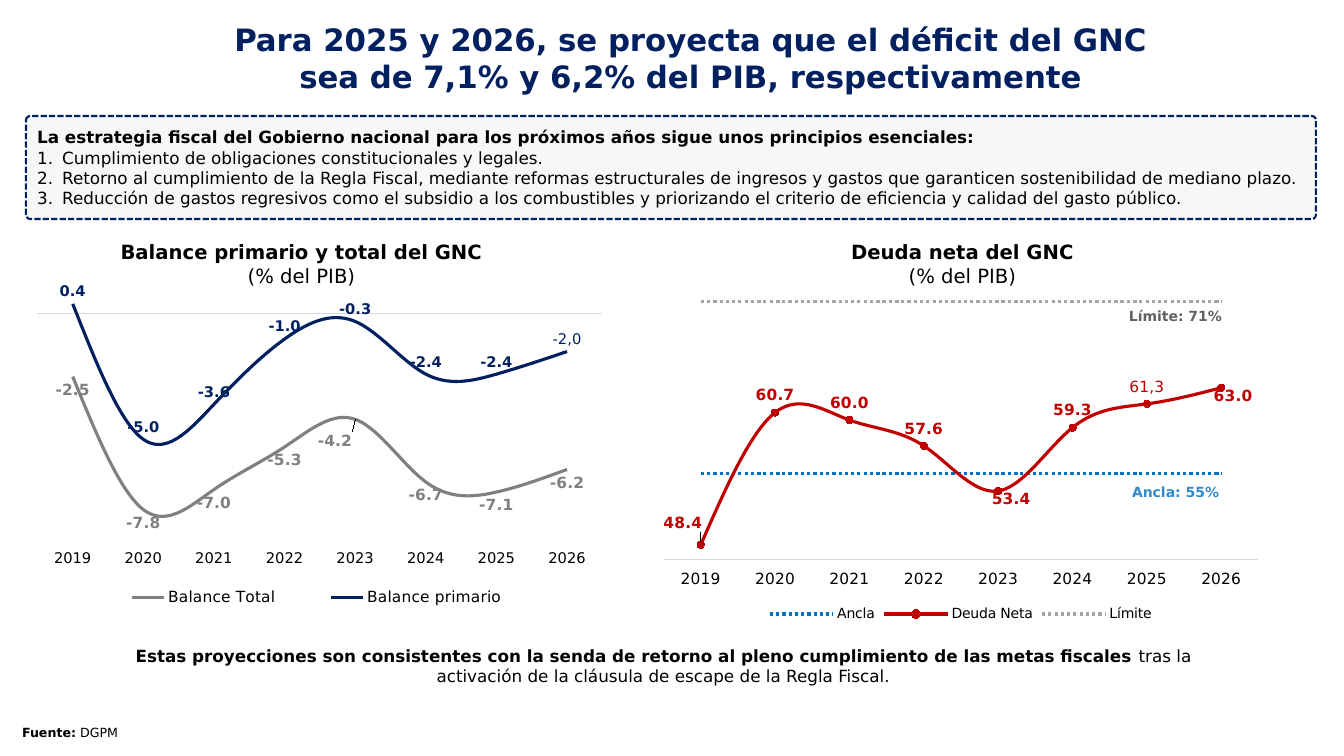
import lxml.etree
import pptx
import pptx.chart.data
import pptx.dml.color
import pptx.enum.chart
import pptx.enum.dml
import pptx.enum.shapes
import pptx.enum.text
import pptx.oxml
import pptx.oxml.ns
import pptx.util

FONT = "DejaVu Sans"
NAVY, BLACK, RED, GRAY = "002060", "000000", "C00000", "808080"
PALE, RULE = "F5F7F9", "D9D9D9"
PX = 914400 / 100.8
SLIDE_SIZE = (1344, 756)

# Each paragraph is a list of (text, bold) runs; boxes are left, top, width, height in px
UNIT = [("(% del PIB)", False)]
TEXTS = [
    dict(box=(202, 16, 977, 85), size=22, color=NAVY, align="CENTER", paragraphs=[
        [("Para 2025 y 2026, se proyecta que el déficit del GNC sea de 7,1% y 6,2% del PIB, "
          "respectivamente", True)]]),
    dict(box=(37, 235, 529, 57), size=14, align="CENTER",
         paragraphs=[[("Balance primario y total del GNC", True)], UNIT]),
    dict(box=(698, 235, 529, 57), size=14, align="CENTER",
         paragraphs=[[("Deuda neta del GNC", True)], UNIT]),
    dict(box=(1119, 303, 118, 27), size=10, color="626262", wrap=False,
         paragraphs=[[("Límite: 71%", True)]]),
    dict(box=(1122, 479, 113, 27), size=10, color="308BCC", wrap=False,
         paragraphs=[[("Ancla: 55%", True)]]),
    dict(box=(18, 720, 957, 25), size=9, side_inset=4,
         paragraphs=[[("Fuente:", True), (" DGPM", False)]]),
    dict(box=(85, 640, 1157, 51), size=12, align="CENTER", anchor="MIDDLE", paragraphs=[
        [("Estas proyecciones son consistentes con la senda de retorno al pleno cumplimiento "
          "de las metas fiscales ", True),
         ("tras la activación de la cláusula de escape de la Regla Fiscal.", False)]]),
]
PRINCIPLES = dict(size=12, align="JUSTIFY", anchor="MIDDLE", paragraphs=[
    [("La estrategia fiscal del Gobierno nacional para los próximos años sigue unos "
      "principios esenciales:", True)],
    [("Cumplimiento de obligaciones constitucionales y legales.", False)],
    [("Retorno al cumplimiento de la Regla Fiscal, mediante reformas estructurales de ingresos "
      "y gastos que garanticen sostenibilidad de mediano plazo.", False)],
    [("Reducción de gastos regresivos como el subsidio a los combustibles y priorizando el "
      "criterio de eficiencia y calidad del gasto público.", False)],
])
PRINCIPLES_BOX = (26, 116, 1290, 103)

YEARS = [str(year) for year in range(2019, 2027)]
# "nudges" moves single labels by px; "custom" replaces the label text of a point
CHARTS = [
    dict(box=(22, 273, 596, 353), limits=(-9, 1), axis_size=10.5, legend_size=11,
         plot=(0.026, 0.045, 0.948, 0.711), legend=(0.1, 0.88, 0.79, 0.08), series=[
             dict(name="Balance Total", values=[-2.5, -7.8, -7.0, -5.3, -4.2, -6.7, -7.1, -6.2],
                  color=GRAY, label="BELOW", size=11, nudges={4: (-20, 8)}),
             dict(name="Balance primario",
                  values=[0.4, -5.0, -3.6, -1.0, -0.3, -2.4, -2.4, -1.5],
                  color=NAVY, label="ABOVE", size=10.5, custom={7: "-2,0"})]),
    dict(box=(663, 291, 596, 335), limits=(47, 72), axis_size=11, legend_size=10,
         plot=(0.001, 0, 0.999, 0.803), series=[
             dict(name="Ancla", values=[55] * 8, color="0070C0"),
             dict(name="Deuda Neta", values=[48.4, 60.7, 60.0, 57.6, 53.4, 59.3, 61.5, 63.0],
                  color=RED, label="ABOVE", size=11, marker=True,
                  nudges={0: (-18, -5), 4: (13, 25), 7: (12, 25)}, custom={6: "61,3"}),
             dict(name="Límite", values=[71] * 8, color="A5A5A5")]),
]
LABEL_FORMAT = "#,##0.0"


def emu(pixels):
    return round(pixels * PX)


def rgb(code):
    return pptx.dml.color.RGBColor.from_string(code)


def set_font(font, size, color, bold=False):
    font.name, font.size, font.bold = FONT, pptx.util.Pt(size), bold
    font.color.rgb = rgb(color)


def set_line(line, color, width, dash=None):
    line.color.rgb = rgb(color)
    line.width = pptx.util.Pt(width)
    if dash:
        line.dash_style = getattr(pptx.enum.dml.MSO_LINE, dash)


def fill_text(frame, paragraphs, size, color=BLACK, align="LEFT", anchor="TOP", wrap=True,
              side_inset=10):
    frame.word_wrap = wrap
    frame.vertical_anchor = getattr(pptx.enum.text.MSO_ANCHOR, anchor)
    frame.margin_left = frame.margin_right = emu(side_inset)
    frame.margin_top = frame.margin_bottom = emu(5)
    for index, runs in enumerate(paragraphs):
        paragraph = frame.paragraphs[0] if index == 0 else frame.add_paragraph()
        paragraph.alignment = getattr(pptx.enum.text.PP_ALIGN, align)
        for text, bold in runs:
            run = paragraph.add_run()
            run.text = text
            set_font(run.font, size, color, bold)


def number_paragraph(paragraph):
    properties = paragraph._p.get_or_add_pPr()
    properties.set("marL", str(emu(25)))
    properties.set("indent", str(-emu(25)))
    lxml.etree.SubElement(properties, pptx.oxml.ns.qn("a:buFont"), typeface="+mj-lt")
    lxml.etree.SubElement(properties, pptx.oxml.ns.qn("a:buAutoNum"), type="arabicPeriod")


def chart_element(parent, tag, **attributes):
    return lxml.etree.SubElement(parent, pptx.oxml.ns.qn("c:" + tag), **attributes)


def set_layout(parent, position, values, inner=False):
    """Give a chart part a manual layout; two values are an offset, four are a frame."""
    for old in parent.findall(pptx.oxml.ns.qn("c:layout")):
        parent.remove(old)
    layout = chart_element(parent, "layout")
    parent.insert(position, layout)
    manual = chart_element(layout, "manualLayout")
    if inner:
        chart_element(manual, "layoutTarget", val="inner")
    if len(values) == 4:
        chart_element(manual, "xMode", val="edge")
        chart_element(manual, "yMode", val="edge")
    for tag, value in zip("xywh", values):
        chart_element(manual, tag, val=f"{value:.3f}")


def label_series(series, content, chart_size):
    color, size = content["color"], content["size"]
    position = getattr(pptx.enum.chart.XL_LABEL_POSITION, content["label"])
    labels = series.data_labels
    labels.show_value = True
    labels.number_format, labels.number_format_is_linked = LABEL_FORMAT, False
    labels.position = position
    set_font(labels.font, size, color, True)
    for index, text in content.get("custom", {}).items():
        label = series.points[index].data_label
        label.text_frame.text = text
        set_font(label.text_frame.paragraphs[0].runs[0].font, size, color)
        label.position = position
    for index, offset in content.get("nudges", {}).items():
        label = series.points[index].data_label
        set_font(label.font, size, color, True)
        label.position = position
        element = series._element.xpath(f"c:dLbls/c:dLbl[c:idx/@val='{index}']")[0]
        set_layout(element, 1, [move / side for move, side in zip(offset, chart_size)])
        element.insert(2, chart_element(element, "numFmt", formatCode=LABEL_FORMAT,
                                        sourceLinked="0"))


def add_line_chart(slide, content):
    data = pptx.chart.data.CategoryChartData()
    data.categories = YEARS
    for entry in content["series"]:
        data.add_series(entry["name"], entry["values"])
    chart = slide.shapes.add_chart(pptx.enum.chart.XL_CHART_TYPE.LINE,
                                   *map(emu, content["box"]), data).chart
    chart.has_title = False
    set_font(chart.font, 10, BLACK)
    chart.plots[0].vary_by_categories = False

    values, years = chart.value_axis, chart.category_axis
    values.minimum_scale, values.maximum_scale = content["limits"]
    values.has_major_gridlines = values.visible = False
    years.major_tick_mark = pptx.enum.chart.XL_TICK_MARK.NONE
    years.tick_label_position = pptx.enum.chart.XL_TICK_LABEL_POSITION.LOW
    set_font(years.tick_labels.font, content["axis_size"], BLACK)
    set_line(years.format.line, RULE, 0.75)

    chart.has_legend = True
    chart.legend.position = pptx.enum.chart.XL_LEGEND_POSITION.BOTTOM
    chart.legend.include_in_layout = False
    set_font(chart.legend.font, content["legend_size"], BLACK)
    if "legend" in content:
        set_layout(chart.legend._element, 1, content["legend"])
    set_layout(chart._chartSpace.chart.plotArea, 0, content["plot"], inner=True)

    for series, entry in zip(chart.plots[0].series, content["series"]):
        labelled = "label" in entry
        series.smooth = labelled
        set_line(series.format.line, entry["color"], 2.25, None if labelled else "ROUND_DOT")
        series.marker.style = pptx.enum.chart.XL_MARKER_STYLE.NONE
        if entry.get("marker"):
            series.marker.style = pptx.enum.chart.XL_MARKER_STYLE.CIRCLE
            series.marker.size = 5
            series.marker.format.fill.solid()
            series.marker.format.fill.fore_color.rgb = rgb(entry["color"])
            set_line(series.marker.format.line, entry["color"], 0.75)
        if labelled:
            label_series(series, entry, content["box"][2:])


def add_principles(slide):
    shape = slide.shapes.add_shape(pptx.enum.shapes.MSO_SHAPE.ROUNDED_RECTANGLE,
                                   *map(emu, PRINCIPLES_BOX))
    shape.adjustments[0] = 0.04
    shape.shadow.inherit = False
    shape.fill.solid()
    shape.fill.fore_color.rgb = rgb(PALE)
    set_line(shape.line, NAVY, 1.5, "SQUARE_DOT")
    fill_text(shape.text_frame, **PRINCIPLES)
    for paragraph in shape.text_frame.paragraphs[1:]:
        number_paragraph(paragraph)


def main():
    presentation = pptx.Presentation()
    presentation.slide_width, presentation.slide_height = map(emu, SLIDE_SIZE)
    slide = presentation.slides.add_slide(presentation.slide_layouts[6])
    for content in CHARTS:
        add_line_chart(slide, content)
    for content in TEXTS:
        box = slide.shapes.add_textbox(*map(emu, content["box"]))
        fill_text(box.text_frame, **{key: content[key] for key in content if key != "box"})
    add_principles(slide)
    presentation.save("out.pptx")


if __name__ == "__main__":
    main()
